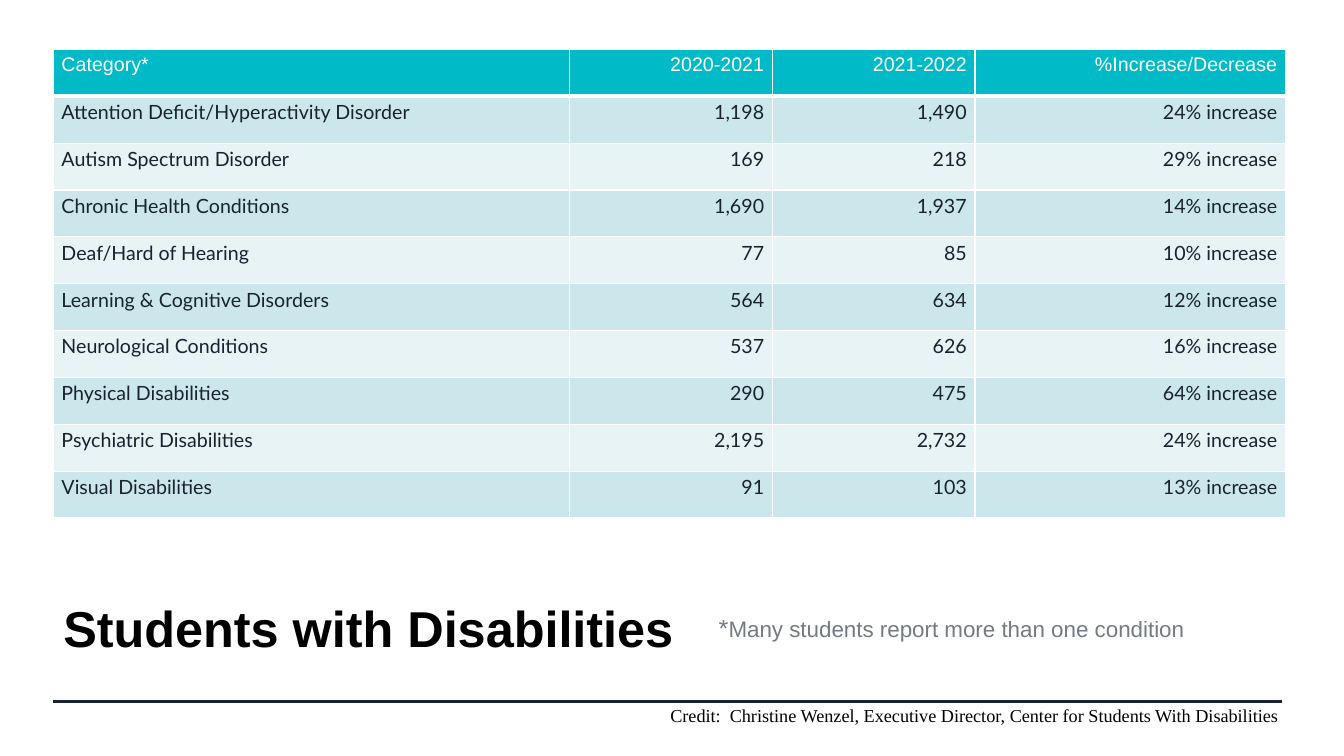
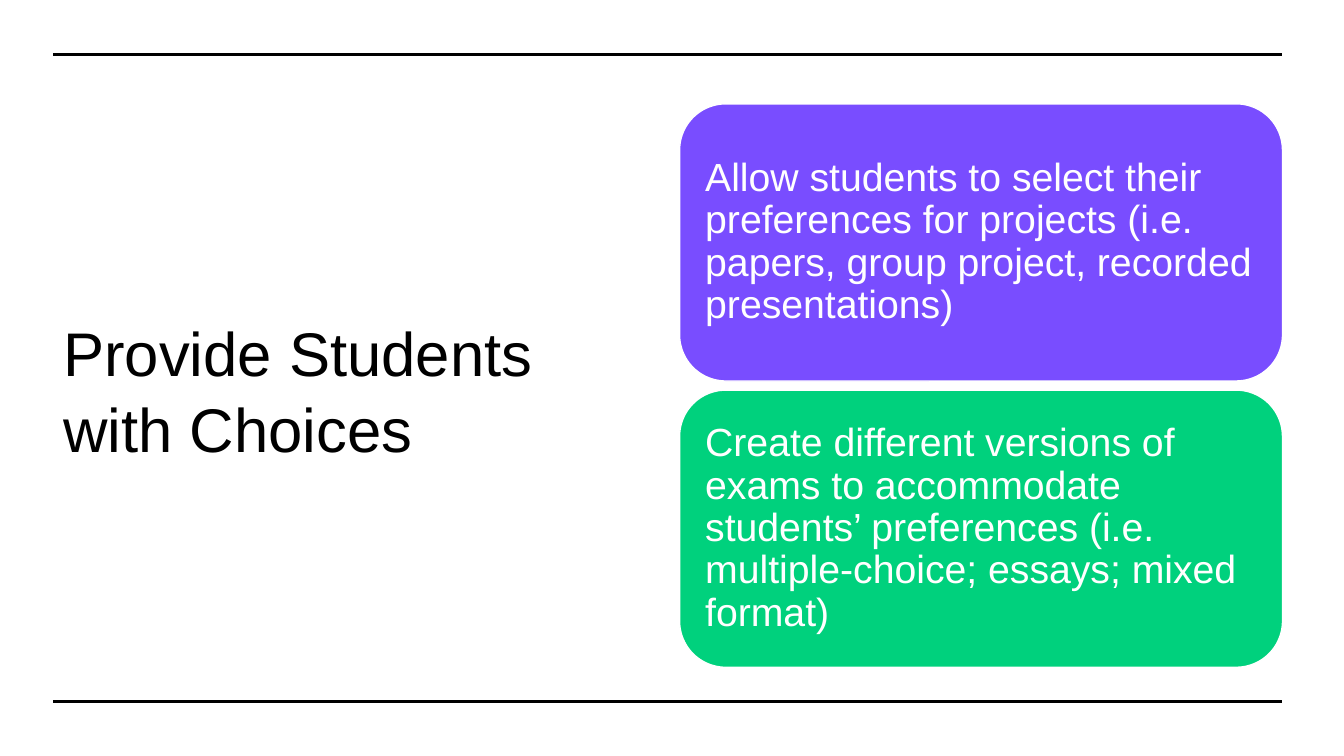
from dataclasses import dataclass

from lxml.etree import SubElement
from pptx import Presentation
from pptx.dml.color import RGBColor
from pptx.enum.shapes import MSO_CONNECTOR, MSO_SHAPE
from pptx.enum.text import MSO_ANCHOR, PP_ALIGN
from pptx.oxml.ns import qn
from pptx.util import Inches, Pt

# Content
HEAD = ("Category*", "2020-2021", "2021-2022", "%Increase/Decrease")
ROWS = [
    ("Attention Deficit/Hyperactivity Disorder", "1,198", "1,490", "24% increase"),
    ("Autism Spectrum Disorder", "169", "218", "29% increase"),
    ("Chronic Health Conditions", "1,690", "1,937", "14% increase"),
    ("Deaf/Hard of Hearing", "77", "85", "10% increase"),
    ("Learning & Cognitive Disorders", "564", "634", "12% increase"),
    ("Neurological Conditions", "537", "626", "16% increase"),
    ("Physical Disabilities", "290", "475", "64% increase"),
    ("Psychiatric Disabilities", "2,195", "2,732", "24% increase"),
    ("Visual Disabilities", "91", "103", "13% increase"),
]
COLS = (5.12, 2.01, 2.01, 3.08)
STAR, NOTE = "*", "Many students report more than one condition"
CREDIT = ("Credit:  Christine Wenzel, Executive Director, "
          "Center for Students With Disabilities")
CARDS = [
    ("Allow students to select their preferences for projects "
     "(i.e. papers, group project, recorded presentations)", "794DFF"),
    ("Create different versions of exams to accommodate students’ preferences "
     "(i.e. multiple-choice; essays; mixed format)", "00D17D"),
]


# Theme
@dataclass(frozen=True)
class Theme:
    sans: str = "Arial"
    body: str = "Lato"
    serif: str = "Times New Roman"
    ink: str = "182230"
    black: str = "000000"
    white: str = "FFFFFF"
    teal: str = "00BAC8"
    bands: tuple = ("CCE7EB", "E7F3F5")
    title: int = 36
    large: int = 44
    card: int = 28
    star: int = 18
    note: int = 16
    cell: int = 14
    credit: int = 13
    left: float = 0.53
    right: float = 12.72
    top: float = 0.54
    foot: float = 6.96


T = Theme()


# Shared helpers
def style(run, size, color, face=T.sans, bold=False):
    font = run.font
    font.name, font.size, font.bold = face, Pt(size), bold
    font.color.rgb = RGBColor.from_string(color)


def paint(item, color):
    item.fill.solid()
    item.fill.fore_color.rgb = RGBColor.from_string(color)


def add_text(slide, box, text, size, color=T.black, face=T.sans, bold=False,
             anchor=MSO_ANCHOR.TOP, space=1.0):
    frame = slide.shapes.add_textbox(*map(Inches, box)).text_frame
    frame.word_wrap = True
    frame.vertical_anchor = anchor
    frame.text = text
    para = frame.paragraphs[0]
    para.line_spacing = space
    for run in para.runs:
        style(run, size, color, face, bold)
    return para


def add_title(slide, box, text, size, **more):
    add_text(slide, box, text, size, space=1.03, **more)


def add_rule(slide, y, color):
    line = slide.shapes.add_connector(
        MSO_CONNECTOR.STRAIGHT,
        Inches(T.left), Inches(y), Inches(T.right), Inches(y))
    line.line.color.rgb = RGBColor.from_string(color)
    line.line.width = Pt(2.25)
    SubElement(line._element.spPr, qn("a:effectLst"))


def fade(run, share):
    for color in run._r.iter(qn("a:srgbClr")):
        SubElement(color, qn("a:alpha"), val=str(share * 1000))


def add_edges(cell, row):
    props = cell._tc.get_or_add_tcPr()
    thick = {0: "B", 1: "T"}.get(row)
    for side in "LRTB":
        width = Pt(3 if side == thick else 1)
        edge = SubElement(props, qn(f"a:ln{side}"), w=str(width))
        fill = SubElement(edge, qn("a:solidFill"))
        SubElement(fill, qn("a:srgbClr"), val=T.white)


def add_grid(slide, x, y, height):
    data = [HEAD, *ROWS]
    table = slide.shapes.add_table(
        len(data), len(COLS), Inches(x), Inches(y),
        Inches(sum(COLS)), Inches(height)).table
    for col, width in zip(table.columns, COLS):
        col.width = Inches(width)
    for r, texts in enumerate(data):
        table.rows[r].height = Inches(height / len(data))
        for c, text in enumerate(texts):
            cell = table.cell(r, c)
            cell.margin_left = cell.margin_right = Inches(0.08)
            cell.margin_top = cell.margin_bottom = Inches(0.04)
            add_edges(cell, r)
            paint(cell, T.bands[(r - 1) % 2] if r else T.teal)
            cell.text_frame.text = text
            para = cell.text_frame.paragraphs[0]
            para.alignment = PP_ALIGN.RIGHT if c else PP_ALIGN.LEFT
            color, face = (T.ink, T.body) if r else (T.white, T.sans)
            style(para.runs[0], T.cell, color, face)


def add_card(slide, box, text, color):
    card = slide.shapes.add_shape(MSO_SHAPE.ROUNDED_RECTANGLE, *map(Inches, box))
    card.shadow.inherit = False
    paint(card, color)
    card.line.color.rgb = RGBColor.from_string(T.white)
    card.line.width = Pt(1)
    frame = card.text_frame
    frame.word_wrap = True
    frame.vertical_anchor = MSO_ANCHOR.MIDDLE
    # The rounded corners add their own inset of 0.13 inch
    frame.margin_left = frame.margin_right = Inches(0.12)
    frame.margin_top = frame.margin_bottom = Inches(0.12)
    frame.text = text
    para = frame.paragraphs[0]
    para.alignment = PP_ALIGN.LEFT
    para.line_spacing = 0.9
    style(para.runs[0], T.card, T.white)


# Slides
def add_counts(slide):
    add_rule(slide, T.foot, T.ink)
    add_title(slide, (T.left, 5.86, 6.5, 0.98), "Students with Disabilities",
              T.title, bold=True)
    add_grid(slide, T.left, 0.49, 4.65)
    para = add_text(slide, (7.03, 6, 5.49, 0.84), STAR, T.star, T.ink, space=1.1)
    note = para.add_run()
    note.text = NOTE
    style(note, T.note, T.ink)
    for run in para.runs:
        fade(run, 60)
    add_text(slide, (6.55, 6.94, 6.67, 0.32), CREDIT, T.credit, face=T.serif)


def add_choices(slide):
    add_title(slide, (T.left, 0.98, 6.14, 5.75), "Provide Students\vwith Choices",
              T.large, anchor=MSO_ANCHOR.MIDDLE)
    for y in (T.top, T.foot):
        add_rule(slide, y, T.black)
    width, height, gap = 5.98, 2.75, 0.09
    for i, (text, color) in enumerate(CARDS):
        box = (T.right - width, 1.03 + i * (height + gap), width, height)
        add_card(slide, box, text, color)


def main():
    deck = Presentation()
    deck.slide_width, deck.slide_height = Inches(13.33), Inches(7.5)
    for build in (add_counts, add_choices):
        build(deck.slides.add_slide(deck.slide_layouts[6]))
    deck.save("out.pptx")


if __name__ == "__main__":
    main()
